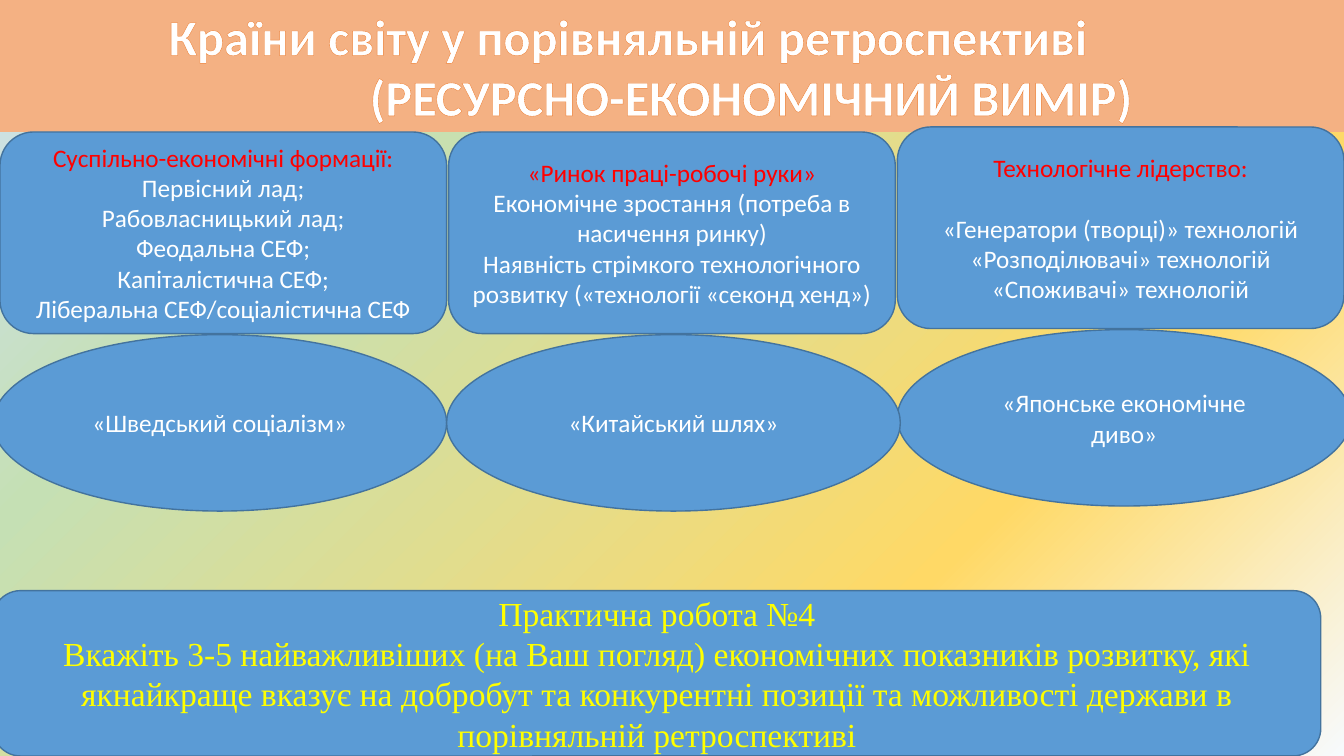
from pptx import Presentation
from pptx.dml.color import RGBColor
from pptx.enum.shapes import MSO_SHAPE
from pptx.enum.text import MSO_ANCHOR, MSO_AUTO_SIZE, PP_ALIGN
from pptx.oxml import parse_xml
from pptx.oxml.ns import nsdecls
from pptx.util import Inches, Pt

WHITE = RGBColor(0xFF, 0xFF, 0xFF)
RED = RGBColor(0xFF, 0x00, 0x00)
YELLOW = RGBColor(0xFF, 0xFF, 0x00)
BLUE = RGBColor(0x5B, 0x9B, 0xD5)
BLUE_EDGE = RGBColor(0x43, 0x73, 0x9E)
PEACH = RGBColor(0xF4, 0xB1, 0x83)
ORANGE = RGBColor(0xED, 0x7D, 0x31)
BACKDROP = [(0, RGBColor(0xF7, 0xFA, 0xFD)), (28, RGBColor(0xFF, 0xD9, 0x66)),
            (75, RGBColor(0xC5, 0xE0, 0xB4)), (100, RGBColor(0xCE, 0xE1, 0xF2))]

SLIDE_W, SLIDE_H = 13.33, 7.5
TITLE_H = 1.31
PITCH, CARD_W, CARD_H = 4.45, 4.43, 2
OVAL_W, OVAL_H = 4.5, 1.75
TASK_W, TASK_H = 13.17, 1.64

# column number, card top, oval shift, heading, gap under heading (pt), lines, oval text
COLUMNS = [
    (0, TITLE_H, -0.07, "Суспільно-економічні формації:", 0,
     ["Первісний лад;", "Рабовласницький лад;", "Феодальна СЕФ;", "Капіталістична СЕФ;",
      "Ліберальна СЕФ/соціалістична СЕФ"], "«Шведський соціалізм»"),
    (2, TITLE_H - 0.05, 0, "Технологічне лідерство:", 22,
     ["«Генератори (творці)» технологій", "«Розподілювачі» технологій",
      "«Споживачі» технологій"], "«Японське економічне диво»"),
    (1, TITLE_H, -0.02, "«Ринок праці-робочі руки»", 0,
     ["Економічне зростання (потреба в насичення ринку)",
      "Наявність стрімкого технологічного розвитку («технології «секонд хенд»)"],
     "«Китайський шлях»"),
]


def add_text(tf, text, size=18, color=WHITE, font="Calibri", bold=False,
             align=PP_ALIGN.CENTER, gap_after=0):
    """Write one paragraph, reusing the empty first one."""
    p = tf.paragraphs[0] if not tf.text else tf.add_paragraph()
    p.alignment = align
    p.line_spacing = 1.0
    p.space_before = Pt(0)
    p.space_after = Pt(gap_after)
    r = p.add_run()
    r.text = text
    r.font.size, r.font.name, r.font.bold = Pt(size), font, bold
    r.font.color.rgb = color
    return p


def add_blue_shape(s, kind, left, top, width, height):
    """Add a blue shape and return its text frame."""
    sp = s.shapes.add_shape(kind, *map(Inches, (left, top, width, height)))
    sp.shadow.inherit = False
    sp.fill.solid()
    sp.fill.fore_color.rgb = BLUE
    sp.line.color.rgb = BLUE_EDGE
    sp.line.width = Pt(1)
    tf = sp.text_frame
    tf.word_wrap = True
    tf.vertical_anchor = MSO_ANCHOR.MIDDLE
    return tf


def set_background(s):
    stops = "".join(f'<a:gs pos="{pos * 1000}"><a:srgbClr val="{color}"/></a:gs>'
                    for pos, color in BACKDROP)
    s._element.cSld.insert(0, parse_xml(
        f'<p:bg {nsdecls("p", "a")}><p:bgPr><a:gradFill rotWithShape="1">'
        f'<a:gsLst>{stops}</a:gsLst><a:path path="circle">'
        '<a:fillToRect l="100000" t="100000"/></a:path></a:gradFill>'
        '<a:effectLst/></p:bgPr></p:bg>'))


def add_title(s, left, top, width, height):
    sp = s.shapes.title
    sp.left, sp.top, sp.width, sp.height = map(Inches, (left, top, width, height))
    sp.fill.solid()
    sp.fill.fore_color.rgb = PEACH
    tf = sp.text_frame
    tf.word_wrap = True
    tf.auto_size = MSO_AUTO_SIZE.NONE
    tf.vertical_anchor = MSO_ANCHOR.TOP
    first = add_text(tf, "Країни світу у порівняльній ретроспективі", size=36, bold=True,
                     align=PP_ALIGN.LEFT)
    first._p.get_or_add_pPr().set("marL", str(Inches(width * 0.118)))
    add_text(tf, "(РЕСУРСНО-ЕКОНОМІЧНИЙ ВИМІР)", size=36, bold=True)
    for p in tf.paragraphs:
        p.runs[0].font._element.insert(0, parse_xml(
            f'<a:ln {nsdecls("a")} w="{Pt(0.52)}"><a:solidFill>'
            f'<a:srgbClr val="{ORANGE}"/></a:solidFill></a:ln>'))


def add_column(s, left, top, oval_shift, heading, gap, lines, oval_text):
    """Place a card with an oval right below it."""
    tf = add_blue_shape(s, MSO_SHAPE.ROUNDED_RECTANGLE, left, top, CARD_W, CARD_H)
    add_text(tf, heading, color=RED, gap_after=gap)
    for line in lines:
        add_text(tf, line)
    oval = add_blue_shape(s, MSO_SHAPE.OVAL, left + oval_shift, top + CARD_H + 0.01,
                          OVAL_W, OVAL_H)
    add_text(oval, oval_text)


def add_task(s, left, top, width, height):
    tf = add_blue_shape(s, MSO_SHAPE.ROUNDED_RECTANGLE, left, top, width, height)
    for text in ("Практична робота №4",
                 "Вкажіть 3-5 найважливіших (на Ваш погляд) економічних показників розвитку, "
                 "які якнайкраще вказує на добробут та конкурентні позиції та можливості "
                 "держави в порівняльній ретроспективі"):
        add_text(tf, text, size=24, color=YELLOW, font="Times New Roman")


def main():
    prs = Presentation()
    prs.slide_width, prs.slide_height = Inches(SLIDE_W), Inches(SLIDE_H)
    s = prs.slides.add_slide(prs.slide_layouts[5])
    set_background(s)
    add_title(s, 0, 0, SLIDE_W, TITLE_H)
    for number, *column in COLUMNS:
        add_column(s, number * PITCH, *column)
    add_task(s, -0.07, SLIDE_H - TASK_H, TASK_W, TASK_H)
    prs.save("out.pptx")


if __name__ == "__main__":
    main()
